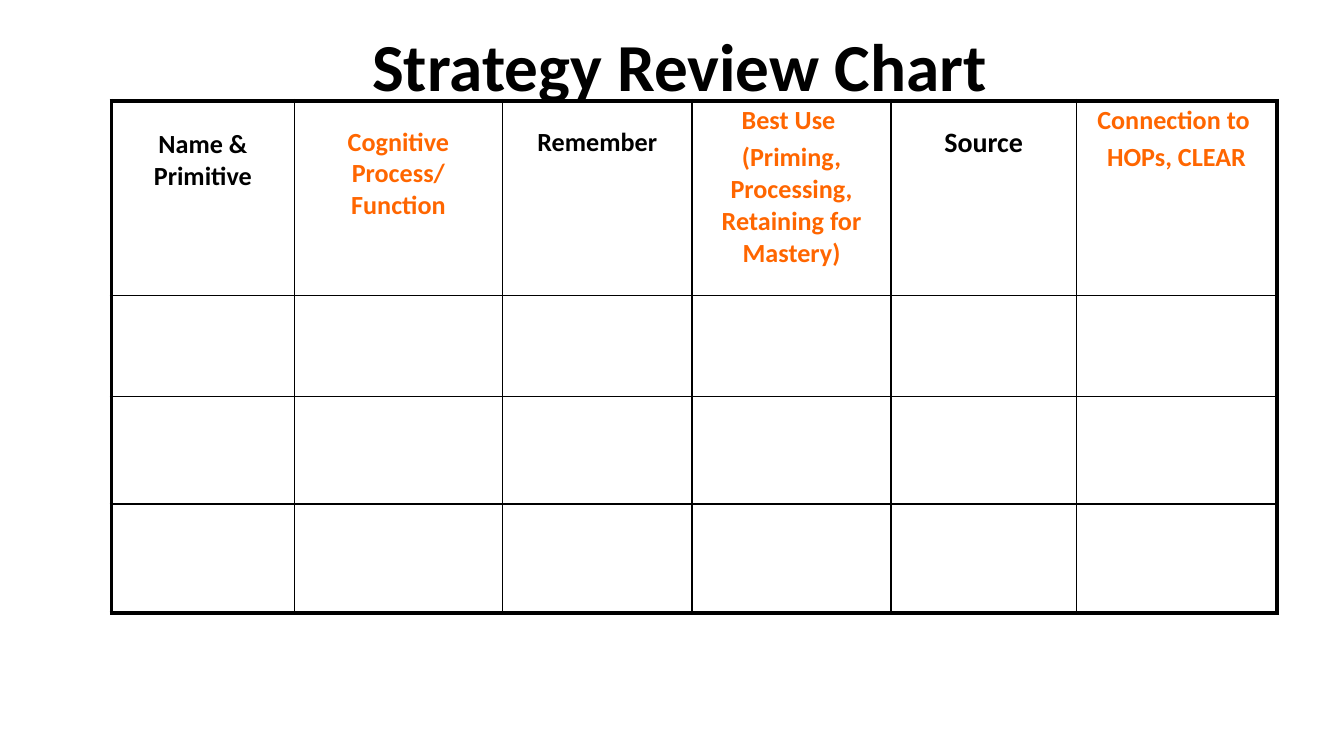
from dataclasses import dataclass

from pptx import Presentation
from pptx.dml.color import RGBColor
from pptx.enum.text import MSO_ANCHOR, PP_ALIGN
from pptx.oxml import parse_xml
from pptx.oxml.ns import nsdecls, qn
from pptx.util import Inches, Pt


@dataclass(frozen=True)
class Theme:
    font: str = "Calibri"
    ink: str = "000000"
    accent: str = "FF6600"
    title_size: float = 36
    head_size: float = 14
    source_size: float = 15
    para_gap: float = 2.8
    outer_line: float = 2.25
    inner_line: float = 1


THEME = Theme()


@dataclass(frozen=True)
class Heading:
    lines: tuple[str, ...]
    width: float
    color: str = THEME.ink
    size: float = THEME.head_size
    drop: float = 0  # extra space above the text, in inches


HEADINGS = (
    Heading(("Name & Primitive",), 1.36, drop=0.18),
    Heading(("Cognitive Process/\vFunction",), 1.55, THEME.accent, drop=0.16),
    Heading(("Remember",), 1.41, drop=0.16),
    Heading(("Best Use ", "(Priming, Processing, Retaining for Mastery)"),
            1.48, THEME.accent),
    Heading(("Source",), 1.38, size=THEME.source_size, drop=0.16),
    Heading(("Connection to ", "HOPs, CLEAR"), 1.49, THEME.accent),
)
ROW_HEIGHTS = (1.45, 0.75, 0.8, 0.81)


def write_text(frame, lines: tuple[str, ...], *, size: float, color: str,
               gap: float = 0) -> None:
    """Write centred bold paragraphs; a vertical tab is a line break."""
    frame.word_wrap = True
    for index, line in enumerate(lines):
        para = frame.add_paragraph() if index else frame.paragraphs[0]
        para.text = line
        para.alignment = PP_ALIGN.CENTER
        para.space_before = Pt(gap if index else 0)
        for span in para.runs:
            span.font.name = THEME.font
            span.font.size = Pt(size)
            span.font.bold = True
            span.font.color.rgb = RGBColor.from_string(color)
        for line_break in para._p.findall(qn("a:br")):
            line_break.append(parse_xml(
                f'<a:rPr {nsdecls("a")} sz="{int(size * 100)}"/>'))


def set_borders(cell, widths: dict[str, float]) -> None:
    """Draw the cell edges; borders must come before the fill."""
    props = cell._tc.get_or_add_tcPr()
    for index, (edge, width) in enumerate(widths.items()):
        props.insert(index, parse_xml(
            f'<a:{edge} {nsdecls("a")} w="{Pt(width)}"><a:solidFill>'
            f'<a:srgbClr val="{THEME.ink}"/></a:solidFill></a:{edge}>'))


def add_title(page, text: str) -> None:
    box = page.shapes.add_textbox(Inches(1.25), Inches(0.08),
                                  Inches(7.5), Inches(0.5))
    frame = box.text_frame
    frame.margin_left = frame.margin_right = Inches(0.1)
    frame.margin_top = frame.margin_bottom = Inches(0.1)
    frame.vertical_anchor = MSO_ANCHOR.TOP
    write_text(frame, (text,), size=THEME.title_size, color=THEME.ink)


def add_review_table(page, headings: tuple[Heading, ...],
                     heights: tuple[float, ...]) -> None:
    last_row, last_column = len(heights) - 1, len(headings) - 1
    table = page.shapes.add_table(
        len(heights), len(headings), Inches(0.83), Inches(0.75),
        Inches(sum(head.width for head in headings)),
        Inches(sum(heights))).table
    table.first_row = table.horz_banding = False
    for column, head in zip(table.columns, headings):
        column.width = Inches(head.width)

    for r, height in enumerate(heights):
        table.rows[r].height = Inches(height)
        for c, head in enumerate(headings):
            cell = table.cell(r, c)
            cell.fill.background()
            cell.margin_left = cell.margin_right = Inches(0.06)
            cell.margin_top = cell.margin_bottom = Inches(0.03)
            on_frame = {"lnL": c == 0, "lnR": c == last_column,
                        "lnT": r == 0, "lnB": r == last_row}
            set_borders(cell, {
                edge: THEME.outer_line if outer else THEME.inner_line
                for edge, outer in on_frame.items()})
            if r == 0:
                cell.margin_top = Inches(0.03 + head.drop)
                write_text(cell.text_frame, head.lines, size=head.size,
                           color=head.color, gap=THEME.para_gap)


def main() -> None:
    deck = Presentation()
    # Widescreen page, 16 to 9
    deck.slide_width = Inches(10)
    deck.slide_height = Inches(10 * 9 / 16)
    page = deck.slides.add_slide(deck.slide_layouts[6])
    # Title, then the chart with its blank rows
    add_title(page, " Strategy Review Chart")
    add_review_table(page, HEADINGS, ROW_HEIGHTS)
    deck.save("out.pptx")


if __name__ == "__main__":
    main()
